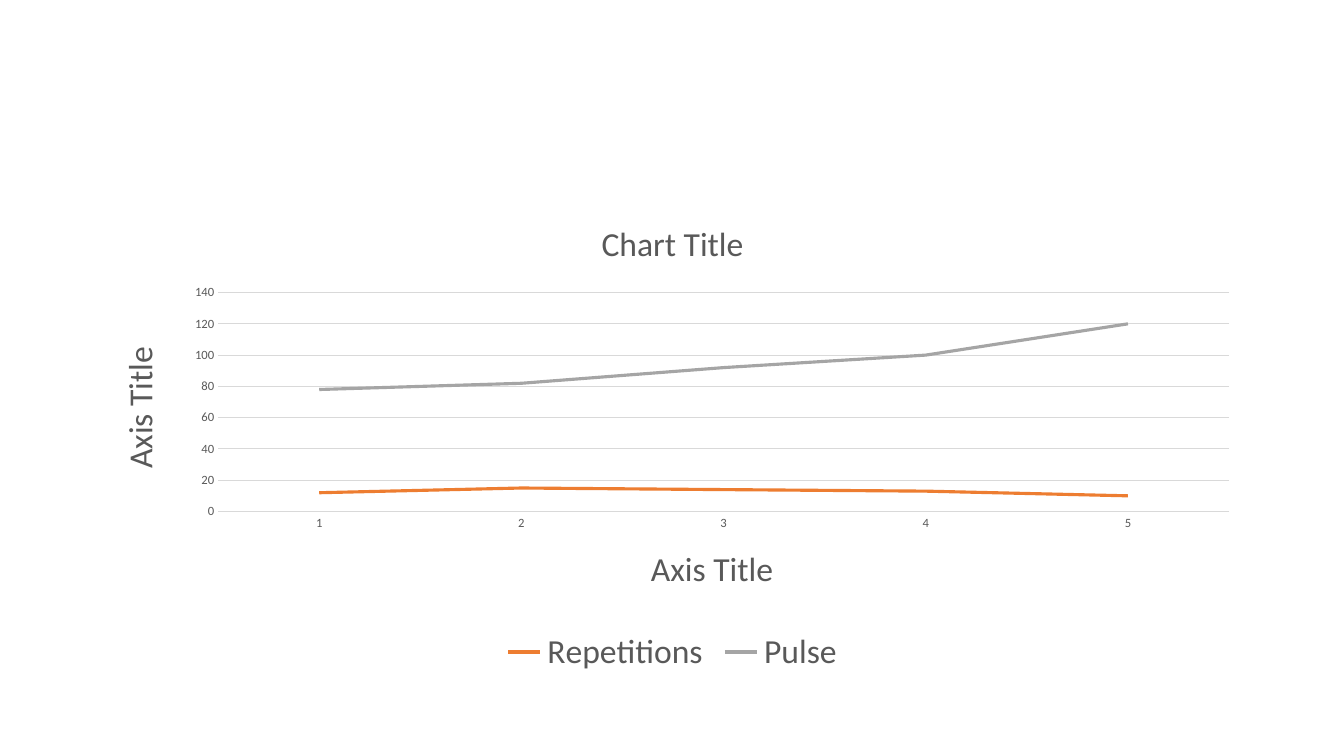
from pptx import Presentation
from pptx.chart.data import CategoryChartData
from pptx.dml.color import RGBColor
from pptx.enum.chart import XL_CHART_TYPE, XL_LEGEND_POSITION, XL_MARKER_STYLE, XL_TICK_MARK
from pptx.util import Inches, Pt

LINE = XL_CHART_TYPE.LINE
BOTTOM = XL_LEGEND_POSITION.BOTTOM
BARE = XL_MARKER_STYLE.NONE
NO_TICK = XL_TICK_MARK.NONE

FACE = "Calibri"
HUES = {"text": "595959", "grid": "D9D9D9", "Repetitions": "ED7D31", "Pulse": "A5A5A5"}
CATS = ["1", "2", "3", "4", "5"]
ROWS = {"Repetitions": [12, 15, 14, 13, 10], "Pulse": [78, 82, 92, 100, 120]}


def set_font(font, size):
    font.name = FACE
    font.size = Pt(size)
    font.bold = False
    font.color.rgb = RGBColor.from_string(HUES["text"])


def set_line(line, hue, width):
    line.color.rgb = RGBColor.from_string(HUES[hue])
    line.width = Pt(width)


def add_title(title, text):
    run = title.text_frame.paragraphs[0].add_run()
    run.text = text
    set_font(run.font, 24)


def style_axis(axis):
    add_title(axis.axis_title, "Axis Title")
    axis.major_tick_mark = NO_TICK
    axis.minor_tick_mark = NO_TICK
    set_font(axis.tick_labels.font, 9)


def add_graph(slide, left, top, width, height):
    data = CategoryChartData()
    data.categories = CATS
    for name, vals in ROWS.items():
        data.add_series(name, vals)
    chart = slide.shapes.add_chart(LINE, left, top, width, height, data).chart
    set_font(chart.font, 10)
    chart.has_title = True
    add_title(chart.chart_title, "Chart Title")
    chart.chart_title.include_in_layout = False

    for axis in (chart.category_axis, chart.value_axis):
        style_axis(axis)
    set_line(chart.category_axis.format.line, "grid", 0.75)
    scale = chart.value_axis
    scale.format.line.fill.background()
    scale.has_major_gridlines = True
    set_line(scale.major_gridlines.format.line, "grid", 0.75)

    chart.has_legend = True
    chart.legend.position = BOTTOM
    chart.legend.include_in_layout = False
    set_font(chart.legend.font, 24)

    chart.plots[0].vary_by_categories = False
    for row in chart.plots[0].series:
        row.smooth = False
        row.marker.style = BARE
        set_line(row.format.line, row.name, 2.25)


def main():
    deck = Presentation()
    deck.slide_width = Inches(13.33)
    deck.slide_height = Inches(7.5)
    slide = deck.slides.add_slide(deck.slide_layouts[6])
    add_graph(slide, Inches(0.92), Inches(1.98), Inches(11.5), Inches(4.76))
    deck.save("out.pptx")


if __name__ == "__main__":
    main()
